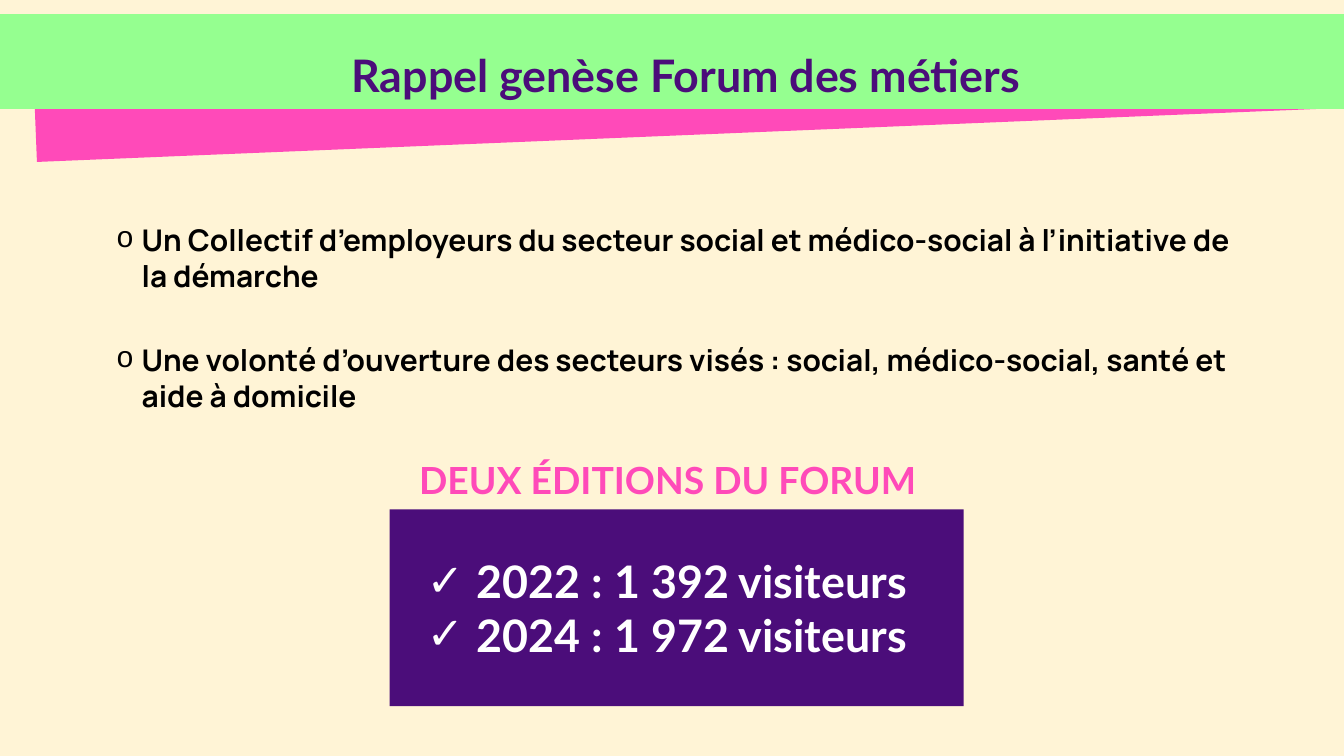
import pptx
import pptx.util
import pptx.dml.color
import pptx.enum.shapes
import pptx.enum.text
from lxml import etree

Inches = pptx.util.Inches
Pt = pptx.util.Pt
ALIGN = pptx.enum.text.PP_ALIGN

# Content
TITLE = "Rappel genèse Forum des métiers"
ORIGINS = [
    "Un Collectif d’employeurs du secteur social et médico-social à l’initiative de la démarche",
    "Une volonté d’ouverture des secteurs visés : social, médico-social, santé et aide à domicile",
]
EDITIONS_HEADING = "DEUX ÉDITIONS DU FORUM"
EDITIONS = ["2022 : 1 392 visiteurs", "2024 : 1 972 visiteurs"]

CREAM, GREEN, PINK = "FFF4D6", "95FF90", "FF4AB9"
PURPLE, WHITE, BLACK = "4B0D7A", "FFFFFF", "000000"
PINK_WEDGE = [(0.5, 1.15), (19.59, 0.36), (19.64, 1.62), (0.55, 2.41)]


def set_fill(target, color):
    target.fill.solid()
    target.fill.fore_color.rgb = pptx.dml.color.RGBColor.from_string(color)


def style_shape(shape, color):
    shape.shadow.inherit = False
    set_fill(shape, color)
    shape.line.fill.background()


def add_bullet(paragraph, character, font, indent):
    properties = paragraph._p.get_or_add_pPr()
    properties.set("marL", str(Inches(indent)))
    properties.set("indent", str(-Inches(indent)))
    for tag, attribute, value in (("buFont", "typeface", font), ("buChar", "char", character)):
        element = etree.SubElement(properties, pptx.oxml.ns.qn("a:" + tag))
        element.set(attribute, value)


def write_text(shape, lines, *, size, color, font="Lato", align=ALIGN.LEFT,
               line_spacing=None, gap=0, bullet=None, margins=(0.1, 0.05)):
    """Fill a shape with bold paragraphs; bullet is (character, font, indent)."""
    frame = shape.text_frame
    frame.word_wrap = True
    frame.auto_size = pptx.enum.text.MSO_AUTO_SIZE.NONE
    frame.vertical_anchor = pptx.enum.text.MSO_ANCHOR.TOP
    frame.margin_left = frame.margin_right = Inches(margins[0])
    frame.margin_top = frame.margin_bottom = Inches(margins[1])
    for index, line in enumerate(lines):
        paragraph = frame.add_paragraph() if index else frame.paragraphs[0]
        paragraph.alignment = align
        paragraph.space_before = Pt(gap if index else 0)
        if line_spacing:
            paragraph.line_spacing = Pt(line_spacing)
        if bullet:
            add_bullet(paragraph, *bullet)
        run = paragraph.add_run()
        run.text = line
        run.font.name = font
        run.font.size = Pt(size)
        run.font.bold = True
        run.font.color.rgb = pptx.dml.color.RGBColor.from_string(color)


def add_rectangle(slide, color, *box):
    kind = pptx.enum.shapes.MSO_SHAPE.RECTANGLE
    shape = slide.shapes.add_shape(kind, *map(Inches, box))
    style_shape(shape, color)


def add_text(slide, lines, *box, **text_format):
    shape = slide.shapes.add_textbox(*map(Inches, box))
    write_text(shape, lines, **text_format)


def main():
    presentation = pptx.Presentation()
    presentation.slide_width, presentation.slide_height = Inches(20), Inches(11.25)
    slide = presentation.slides.add_slide(presentation.slide_layouts[5])
    set_fill(slide.background, CREAM)

    # Header: pink wedge behind the green band
    points = [(Inches(x), Inches(y)) for x, y in PINK_WEDGE]
    builder = slide.shapes.build_freeform(*points[0])
    builder.add_line_segments(points[1:], close=True)
    style_shape(builder.convert_to_shape(), PINK)
    add_rectangle(slide, GREEN, 0, 0.21, 20, 1.41)

    # Title, moved in front of the band
    title = slide.shapes.title
    title.left, title.top, title.width, title.height = map(Inches, (3.99, 0.08, 12.43, 1.43))
    slide.shapes._spTree.append(title._element)
    write_text(title, [TITLE], size=48, color=PURPLE, align=ALIGN.CENTER,
               line_spacing=102.8, margins=(0, 0))

    # Origins of the forum
    add_text(slide, ORIGINS, 1.63, 3.25, 17.17, 3.04, size=32, color=BLACK,
             font="Manrope", gap=52, bullet=("o", "Courier New", 0.38))

    # Past editions
    add_rectangle(slide, PURPLE, 5.8, 7.58, 8.54, 2.93)
    add_text(slide, EDITIONS, 6.25, 8.19, 10.53, 1.72, size=48, color=WHITE,
             bullet=("✓", "Arial", 0.75))
    add_text(slide, [EDITIONS_HEADING], 4.67, 6.75, 10.53, 0.77, size=40,
             color=PINK, align=ALIGN.CENTER)

    presentation.save("out.pptx")


if __name__ == "__main__":
    main()
